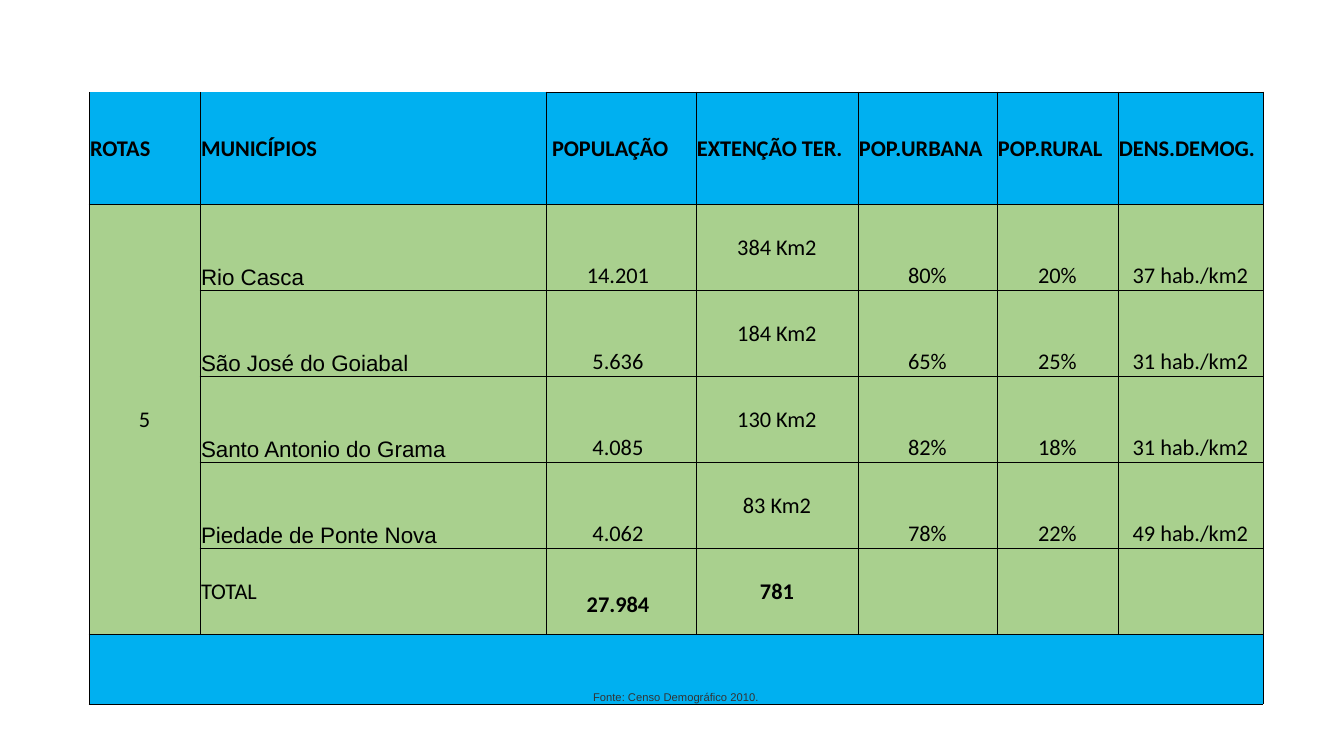
from lxml import etree
from pptx import Presentation
from pptx import util as u
from pptx.dml.color import RGBColor
from pptx.enum import text
from pptx.oxml.ns import qn

PX = 914400 / 100.8
COLORS = {"blue": "00B0F0", "green": "A9D08E", "black": "000000", "source": "333333"}
MIDDLE, BOTTOM = text.MSO_ANCHOR.MIDDLE, text.MSO_ANCHOR.BOTTOM
LEFT, CENTER = text.PP_ALIGN.LEFT, text.PP_ALIGN.CENTER


def px(n):
    return u.Emu(round(n * PX))


def add_border(cell, side, visible):
    ln = etree.SubElement(cell._tc.get_or_add_tcPr(), qn(f"a:ln{side}"), w="6350")
    if visible:
        fill = etree.SubElement(ln, qn("a:solidFill"))
        etree.SubElement(fill, qn("a:srgbClr"), val=COLORS["black"])
    else:
        etree.SubElement(ln, qn("a:noFill"))


prs = Presentation()
prs.slide_width, prs.slide_height = px(1344), px(756)
slide = prs.slides.add_slide(prs.slide_layouts[6])

# Table content
rows = [
    ["ROTAS", "MUNICÍPIOS", " POPULAÇÃO", "EXTENÇÃO TER.", "POP.URBANA", "POP.RURAL", "DENS.DEMOG."],
    ["5", "Rio Casca", "14.201", "384 Km2", "80%", "20%", "37 hab./km2"],
    ["", "São José do Goiabal", "5.636", "184 Km2", "65%", "25%", "31 hab./km2"],
    ["", "Santo Antonio do Grama", "4.085", "130 Km2", "82%", "18%", "31 hab./km2"],
    ["", "Piedade de Ponte Nova", "4.062", "83 Km2", "78%", "22%", "49 hab./km2"],
    ["", "TOTAL", "27.984", "781", "", "", ""],
    ["Fonte: Censo Demográfico 2010.", "", "", "", "", "", ""],
]
col_widths = [111, 346, 150, 162, 139, 121, 145]
row_heights = [112, 86, 86, 86, 86, 86, 70]
HEADER, TOTAL, SOURCE = 0, 5, 6
ROUTE, TOWN, POPULATION, AREA = range(4)

# Grid
table = slide.shapes.add_table(len(rows), len(col_widths), px(89), px(92),
                               px(sum(col_widths)), px(sum(row_heights))).table
table.first_row = table.horz_banding = False
for column, width in zip(table.columns, col_widths):
    column.width = px(width)
for row, height in zip(table.rows, row_heights):
    row.height = px(height)

# Cells
for i, values in enumerate(rows):
    for j, value in enumerate(values):
        cell = table.cell(i, j)
        for side in "LRTB":
            add_border(cell, side, not (side == "T" and i == HEADER and j <= TOWN))
        cell.fill.solid()
        fill = "blue" if i in (HEADER, SOURCE) else "green"
        cell.fill.fore_color.rgb = RGBColor.from_string(COLORS[fill])

        cell.margin_left = cell.margin_right = cell.margin_top = px(1)
        cell.margin_bottom = 0
        if j == POPULATION and HEADER < i < SOURCE:
            cell.margin_right = px(7)
            if i == TOTAL:
                cell.margin_top = px(28)
        centered_row = i in (HEADER, TOTAL)
        in_middle = i != SOURCE and (centered_row or j in (ROUTE, AREA))
        cell.vertical_anchor = MIDDLE if in_middle else BOTTOM

        if not value:
            continue
        p = cell.text_frame.paragraphs[0]
        p.text = value
        p.alignment = LEFT if i == HEADER or j == TOWN else CENTER
        town_name = j == TOWN and not centered_row
        p.font.name = "Arial" if town_name or i == SOURCE else "Calibri"
        p.font.size = u.Pt(8 if i == SOURCE else 16)
        p.font.bold = i == HEADER or (i == TOTAL and j > TOWN)
        p.font.color.rgb = RGBColor.from_string(COLORS["source" if i == SOURCE else "black"])

# Merged route and source cells
table.cell(1, ROUTE).merge(table.cell(TOTAL, ROUTE))
table.cell(SOURCE, 0).merge(table.cell(SOURCE, len(col_widths) - 1))

prs.save("out.pptx")
